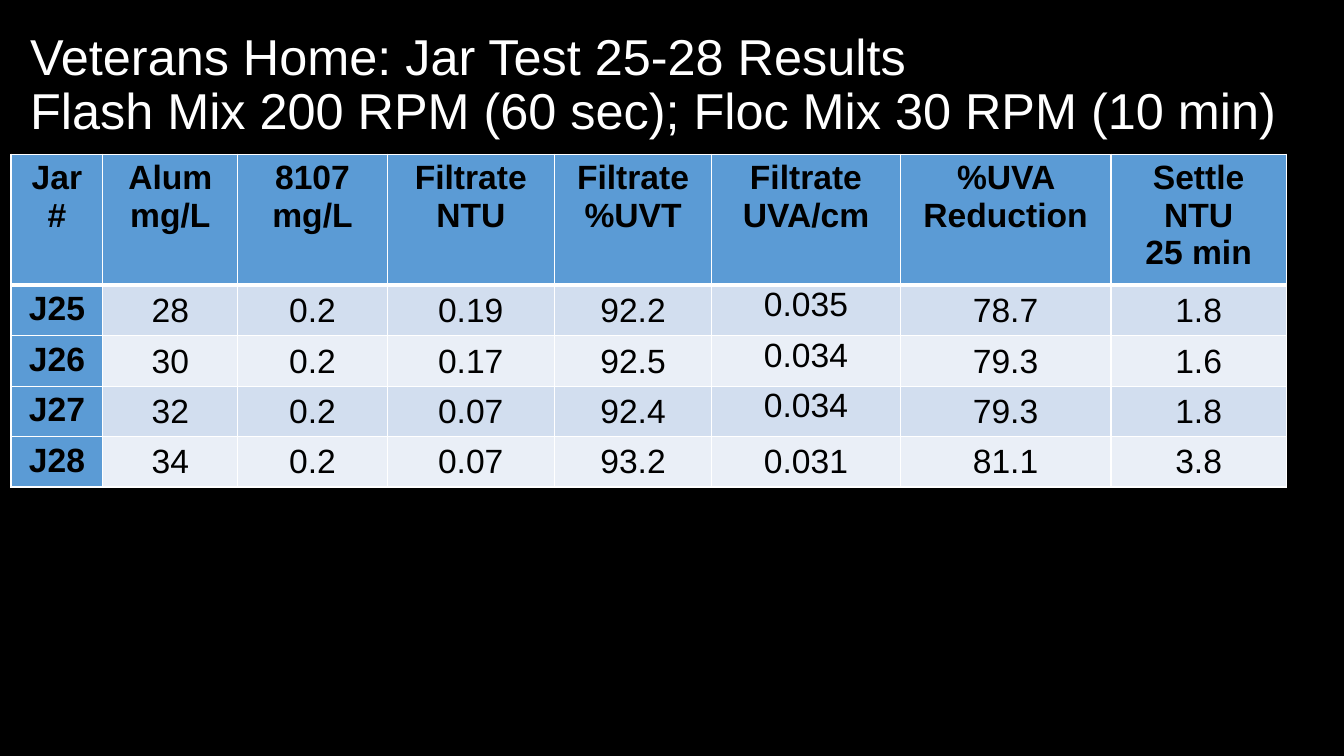
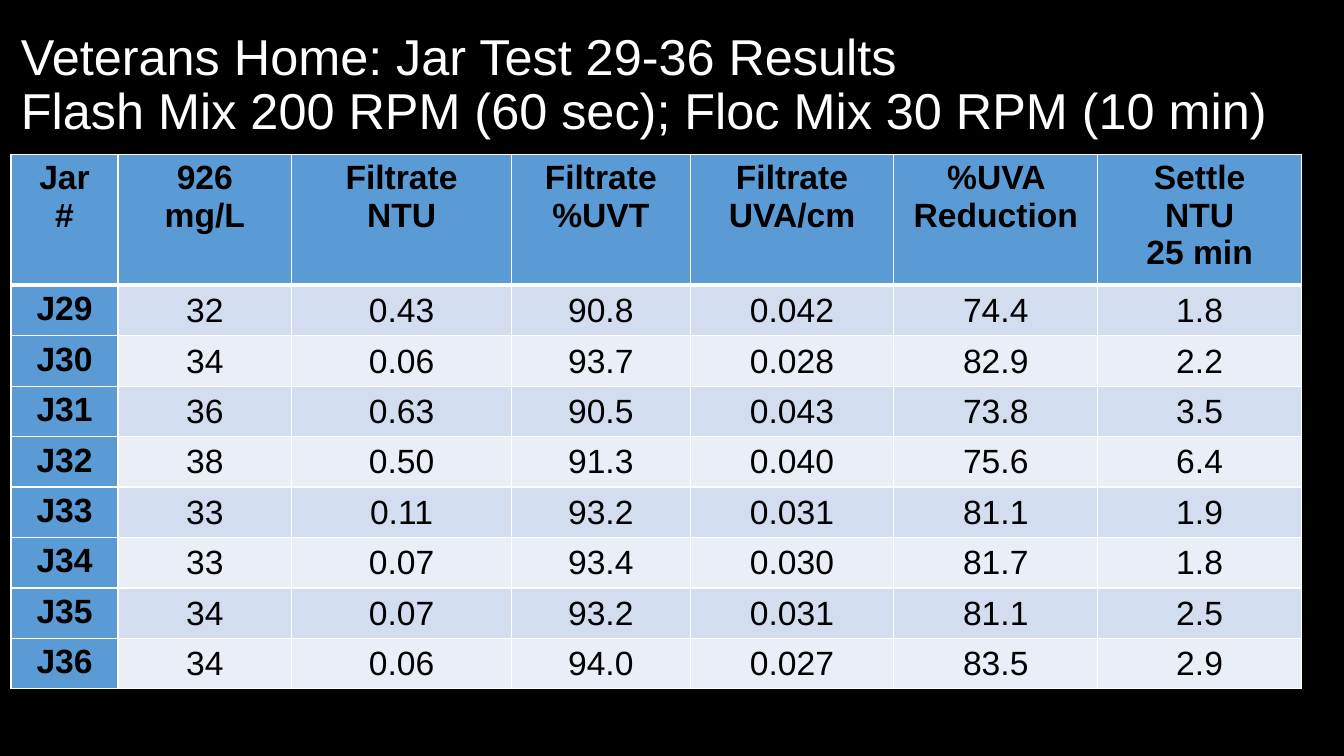
"""Build two slides of jar test results with a shared title and table style."""
from dataclasses import dataclass

from lxml.etree import SubElement
from pptx import Presentation
from pptx.dml.color import RGBColor
from pptx.enum.text import MSO_ANCHOR as Anchor, PP_ALIGN as Align
from pptx.oxml.ns import qn
from pptx.presentation import Presentation as Deck
from pptx.slide import Slide
from pptx.table import _Cell as Cell
from pptx.text.text import _Paragraph as Paragraph
from pptx.util import Inches, Pt

BLACK = RGBColor(0x00, 0x00, 0x00)
WHITE = RGBColor(0xFF, 0xFF, 0xFF)
HEADER_BLUE = RGBColor(0x5B, 0x9B, 0xD5)
BANDS = (RGBColor(0xD2, 0xDE, 0xEF), RGBColor(0xEA, 0xEF, 0xF7))

FONT = "Arial"
TITLE_SIZE, TABLE_SIZE = Pt(36), Pt(24)
THIN, THICK = Pt(1), Pt(3)
SLIDE_WIDTH, SLIDE_HEIGHT = Inches(13.33), Inches(7.5)
TITLE_TOP, TITLE_HEIGHT = Inches(0.13), Inches(1.45)
TABLE_LEFT, TABLE_TOP = Inches(0.11), Inches(1.53)
HEADER_HEIGHT, ROW_HEIGHT = Inches(1.21), Inches(0.47)
CELL_INSET = Inches(0.01)

MIXING = "Flash Mix 200 RPM (60 sec); Floc Mix 30 RPM (10 min)"
RESULT_HEADERS = ("Filtrate\nNTU", "Filtrate\n%UVT", "Filtrate\nUVA/cm",
                  "%UVA Reduction", "Settle\nNTU\n25 min")


@dataclass(frozen=True)
class JarTest:
    """One slide: its jars, the doses and the measured results."""

    jars: str
    title_left: float
    title_width: float
    table_width: float
    column_shares: tuple[int, ...]
    dose_headers: tuple[str, ...]
    first_jar: int
    rows: tuple[str, ...]
    raised_cells: frozenset[tuple[int, int]] = frozenset()


JAR_TESTS = (
    JarTest(
        "25-28", 0.2, 13.02, 12.65, (91, 134, 148, 166, 156, 187, 209, 174),
        ("Alum\nmg/L", "8107\nmg/L"), 25,
        ("28 0.2 0.19 92.2 0.035 78.7 1.8",
         "30 0.2 0.17 92.5 0.034 79.3 1.6",
         "32 0.2 0.07 92.4 0.034 79.3 1.8",
         "34 0.2 0.07 93.2 0.031 81.1 3.8"),
        frozenset({(1, 5), (2, 5), (3, 5)}),
    ),
    JarTest(
        "29-36", 0.11, 12.8, 12.8, (106, 172, 218, 177, 202, 202, 202),
        ("926\nmg/L",), 29,
        ("32 0.43 90.8 0.042 74.4 1.8",
         "34 0.06 93.7 0.028 82.9 2.2",
         "36 0.63 90.5 0.043 73.8 3.5",
         "38 0.50 91.3 0.040 75.6 6.4",
         "33 0.11 93.2 0.031 81.1 1.9",
         "33 0.07 93.4 0.030 81.7 1.8",
         "34 0.07 93.2 0.031 81.1 2.5",
         "34 0.06 94.0 0.027 83.5 2.9"),
    ),
)


def add_text(paragraph: Paragraph, text: str, size: Pt, color: RGBColor,
             bold: bool = False) -> None:
    """Add one styled run to a paragraph."""
    run = paragraph.add_run()
    run.text = text
    run.font.name, run.font.size, run.font.bold = FONT, size, bold
    run.font.color.rgb = color


def add_title(slide: Slide, test: JarTest) -> None:
    """Write the two-line title."""
    title = slide.shapes.add_textbox(Inches(test.title_left), TITLE_TOP,
                                     Inches(test.title_width), TITLE_HEIGHT)
    frame = title.text_frame
    frame.word_wrap = True
    frame.vertical_anchor = Anchor.MIDDLE
    heading = frame.paragraphs[0]
    heading.line_spacing = 0.9
    add_text(heading, f"Veterans Home: Jar Test {test.jars} Results", TITLE_SIZE, WHITE)
    heading.add_line_break()
    add_text(heading, MIXING, TITLE_SIZE, WHITE)


def add_borders(cell: Cell, row: int) -> None:
    """Outline a cell in white, with a thick rule under the header row."""
    widths = {"a:lnL": THIN, "a:lnR": THIN,
              "a:lnT": THICK if row == 1 else THIN,
              "a:lnB": THICK if row == 0 else THIN}
    properties = cell._tc.get_or_add_tcPr()
    for side, width in widths.items():
        line = SubElement(properties, qn(side), w=str(int(width)))
        fill = SubElement(line, qn("a:solidFill"))
        SubElement(fill, qn("a:srgbClr"), val=str(WHITE))


def fill_cell(cell: Cell, text: str, row: int, column: int, raised: bool) -> None:
    """Write and style one cell according to its place in the table."""
    is_label = row == 0 or column == 0
    add_borders(cell, row)
    cell.fill.solid()
    cell.fill.fore_color.rgb = HEADER_BLUE if is_label else BANDS[(row - 1) % 2]
    if not is_label:
        cell.margin_left = cell.margin_top = cell.margin_right = CELL_INSET
        cell.margin_bottom = 0
        cell.vertical_anchor = Anchor.TOP if raised else Anchor.MIDDLE
    frame = cell.text_frame
    for index, part in enumerate(text.split("\n")):
        paragraph = frame.add_paragraph() if index else frame.paragraphs[0]
        paragraph.alignment = Align.CENTER
        add_text(paragraph, part, TABLE_SIZE, BLACK, is_label)


def add_results(slide: Slide, test: JarTest) -> None:
    """Draw the results table."""
    grid = [("Jar\n#", *test.dose_headers, *RESULT_HEADERS)]
    grid += [(f"J{jar}", *values.split())
             for jar, values in enumerate(test.rows, test.first_jar)]
    width = Inches(test.table_width)
    height = HEADER_HEIGHT + ROW_HEIGHT * len(test.rows)
    results = slide.shapes.add_table(len(grid), len(grid[0]), TABLE_LEFT,
                                     TABLE_TOP, width, height).table
    results.horz_banding = False
    for column, share in zip(results.columns, test.column_shares):
        column.width = int(width * share / sum(test.column_shares))
    for r, texts in enumerate(grid):
        results.rows[r].height = ROW_HEIGHT if r else HEADER_HEIGHT
        for c, text in enumerate(texts):
            fill_cell(results.cell(r, c), text, r, c, (r, c) in test.raised_cells)


def add_jar_test(deck: Deck, test: JarTest) -> None:
    """Add one black slide with its title and results."""
    slide = deck.slides.add_slide(deck.slide_layouts[6])
    slide.background.fill.solid()
    slide.background.fill.fore_color.rgb = BLACK
    add_title(slide, test)
    add_results(slide, test)


def main() -> None:
    """Build and save the deck."""
    deck = Presentation()
    deck.slide_width, deck.slide_height = SLIDE_WIDTH, SLIDE_HEIGHT
    for test in JAR_TESTS:
        add_jar_test(deck, test)
    deck.save("out.pptx")


if __name__ == "__main__":
    main()
